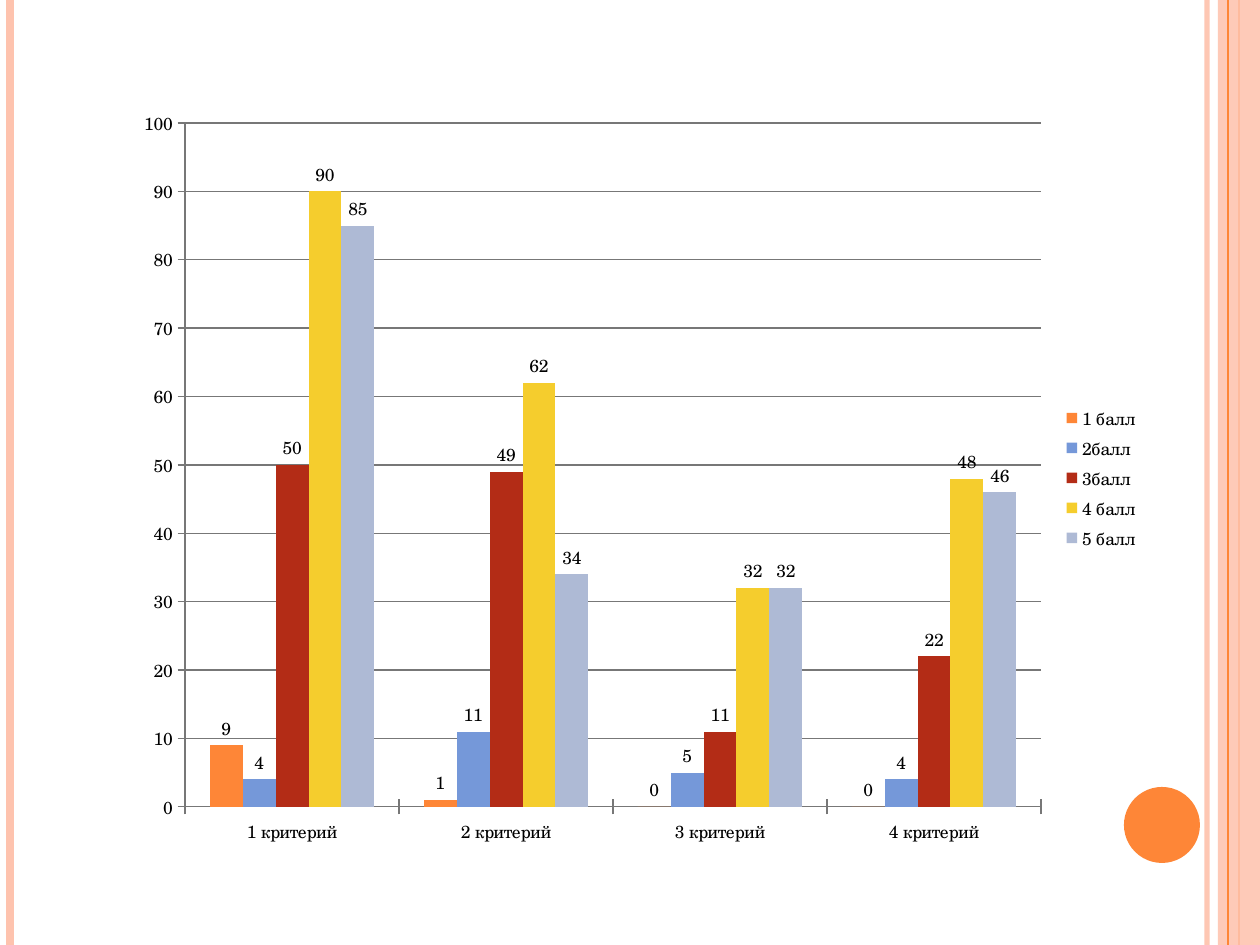
import pptx
import pptx.chart.data
import pptx.dml.color
import pptx.enum.chart
import pptx.enum.shapes
import pptx.oxml
import pptx.oxml.ns
import pptx.util
from dataclasses import dataclass

PX = 914400 / 126
WIDTH, HEIGHT = 1260, 945


@dataclass(frozen=True)
class Theme:
    font: str = "TeX Gyre Schola"
    size: int = 10
    text: str = "000000"
    grid: str = "777777"
    pink: str = "FEC3AE"
    orange: str = "FE8637"
    series: tuple = ("FE8637", "7598D9", "B32C16", "F5CD2D", "AEBAD5")


def px(n):
    return pptx.util.Emu(round(n * PX))


def rgb(value):
    return pptx.dml.color.RGBColor.from_string(value)


def set_alpha(sp, percent):
    """Make the first solid colour of the shape partly transparent."""
    color = sp._element.spPr.find(".//" + pptx.oxml.ns.qn("a:srgbClr"))
    alpha = color.makeelement(pptx.oxml.ns.qn("a:alpha"), {"val": str(percent * 1000)})
    color.append(alpha)


class Builder:
    def __init__(self, slide, theme):
        self.s = slide
        self.theme = theme

    def rail(self, x, color, weight, alpha=100):
        """Draw a vertical line over the full slide height."""
        kind = pptx.enum.shapes.MSO_CONNECTOR.STRAIGHT
        line = self.s.shapes.add_connector(kind, px(x), 0, px(x), px(HEIGHT))
        line.line.color.rgb = rgb(color)
        line.line.width = pptx.util.Pt(weight)
        props = line._element.spPr
        props.append(props.makeelement(pptx.oxml.ns.qn("a:effectLst"), {}))
        if alpha < 100:
            set_alpha(line, alpha)

    def shape(self, kind, x, y, w, h, color, alpha=100):
        sp = self.s.shapes.add_shape(kind, px(x), px(y), px(w), px(h))
        sp.shadow.inherit = False
        sp.fill.solid()
        sp.fill.fore_color.rgb = rgb(color)
        sp.line.fill.background()
        if alpha < 100:
            set_alpha(sp, alpha)

    def column_chart(self, box, plot, categories, series):
        """Add clustered columns; box and plot are left, top, width, height."""
        data = pptx.chart.data.CategoryChartData()
        data.categories = categories
        for name, values in series:
            data.add_series(name, values)
        kind = pptx.enum.chart.XL_CHART_TYPE.COLUMN_CLUSTERED
        frame = self.s.shapes.add_chart(kind, *map(px, box), data)
        chart = frame.chart
        chart.has_title = False
        chart.font.name = self.theme.font
        chart.font.size = pptx.util.Pt(self.theme.size)
        chart.font.color.rgb = rgb(self.theme.text)
        chart.has_legend = True
        chart.legend.position = pptx.enum.chart.XL_LEGEND_POSITION.RIGHT
        chart.legend.include_in_layout = False
        self.style_axes(chart)
        self.style_series(chart.plots[0])
        self.place_plot(chart, box, plot)

    def style_axes(self, chart):
        for axis in (chart.category_axis, chart.value_axis):
            axis.major_tick_mark = pptx.enum.chart.XL_TICK_MARK.CROSS
            axis.format.line.color.rgb = rgb(self.theme.grid)
        scale = chart.value_axis
        scale.minimum_scale, scale.maximum_scale, scale.major_unit = 0, 100, 10
        scale.has_major_gridlines = True
        scale.major_gridlines.format.line.color.rgb = rgb(self.theme.grid)

    def style_series(self, plot):
        plot.gap_width, plot.overlap = 150, 0
        plot.vary_by_categories = False
        for series, color in zip(plot.series, self.theme.series):
            series.format.fill.solid()
            series.format.fill.fore_color.rgb = rgb(color)
            labels = series.data_labels
            labels.show_value = True
            labels.position = pptx.enum.chart.XL_LABEL_POSITION.OUTSIDE_END

    def place_plot(self, chart, box, plot):
        """Fix the inner plot area inside the chart frame."""
        left, top, width, height = box
        x, y, w, h = plot
        parts = {"x": (x - left) / width, "y": (y - top) / height,
                 "w": w / width, "h": h / height}
        modes = "".join(f'<c:{n}Mode val="edge"/>' for n in "xy")
        values = "".join(f'<c:{n} val="{v:.4f}"/>' for n, v in parts.items())
        layout = pptx.oxml.parse_xml(
            f'<c:layout {pptx.oxml.ns.nsdecls("c")}><c:manualLayout>'
            f'<c:layoutTarget val="inner"/>{modes}{values}'
            '</c:manualLayout></c:layout>')
        area = chart._chartSpace.chart.plotArea
        for old in area.findall(pptx.oxml.ns.qn("c:layout")):
            area.remove(old)
        area.insert(0, layout)


def main():
    prs = pptx.Presentation()
    prs.slide_width, prs.slide_height = px(WIDTH), px(HEIGHT)
    theme = Theme()
    b = Builder(prs.slides.add_slide(prs.slide_layouts[6]), theme)
    shapes = pptx.enum.shapes.MSO_SHAPE

    b.rail(1207, theme.pink, 3, alpha=93)
    b.rail(10, theme.pink, 4.5)
    b.rail(1239, theme.orange, 1.5)
    b.shape(shapes.RECTANGLE, 1218, 0, 42, HEIGHT, theme.pink, alpha=87)
    b.rail(1228, theme.orange, 0.75)
    b.shape(shapes.OVAL, 1124, 787, 76, 76, theme.orange)

    b.column_chart(
        box=(123, 96, 1029, 764),
        plot=(185, 123, 856, 684),
        categories=[f"{n} критерий" for n in range(1, 5)],
        series=[
            ("1 балл", (9, 1, 0, 0)),
            ("2балл", (4, 11, 5, 4)),
            ("3балл", (50, 49, 11, 22)),
            ("4 балл", (90, 62, 32, 48)),
            ("5 балл", (85, 34, 32, 46)),
        ])
    prs.save("out.pptx")


if __name__ == "__main__":
    main()
